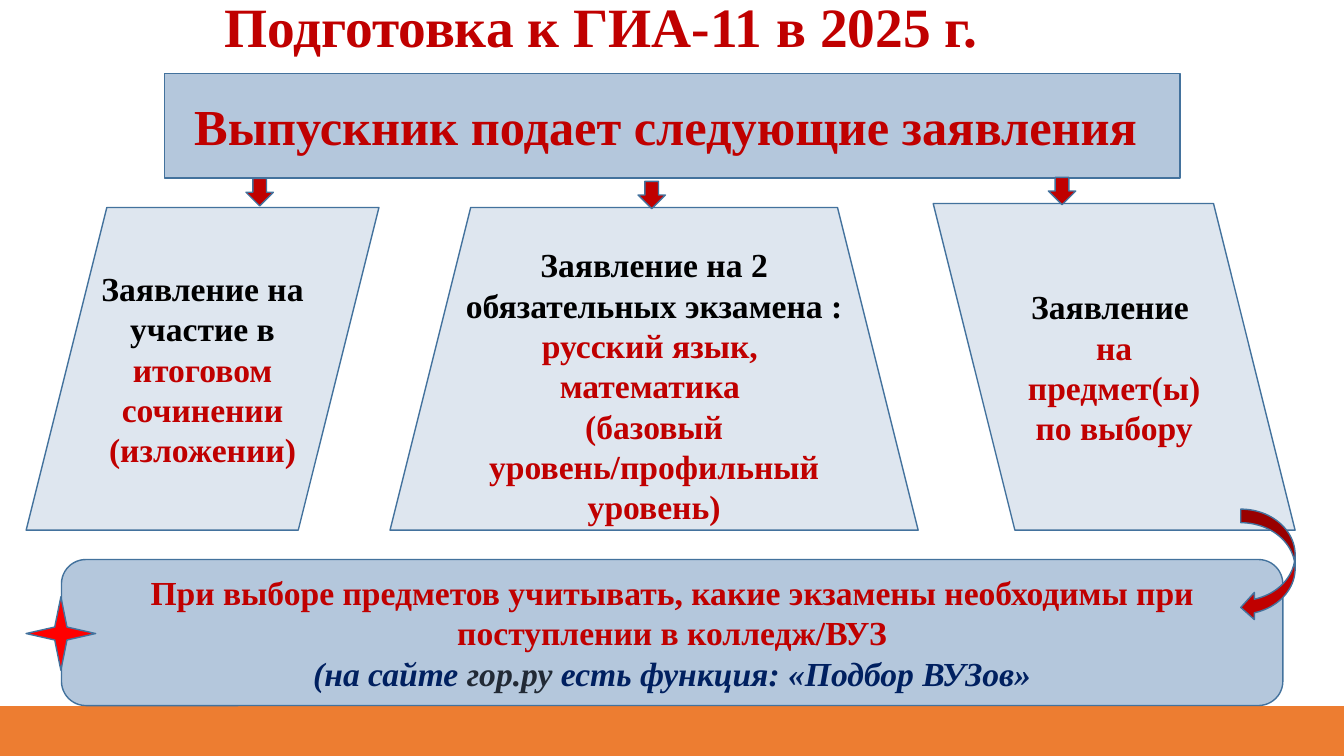
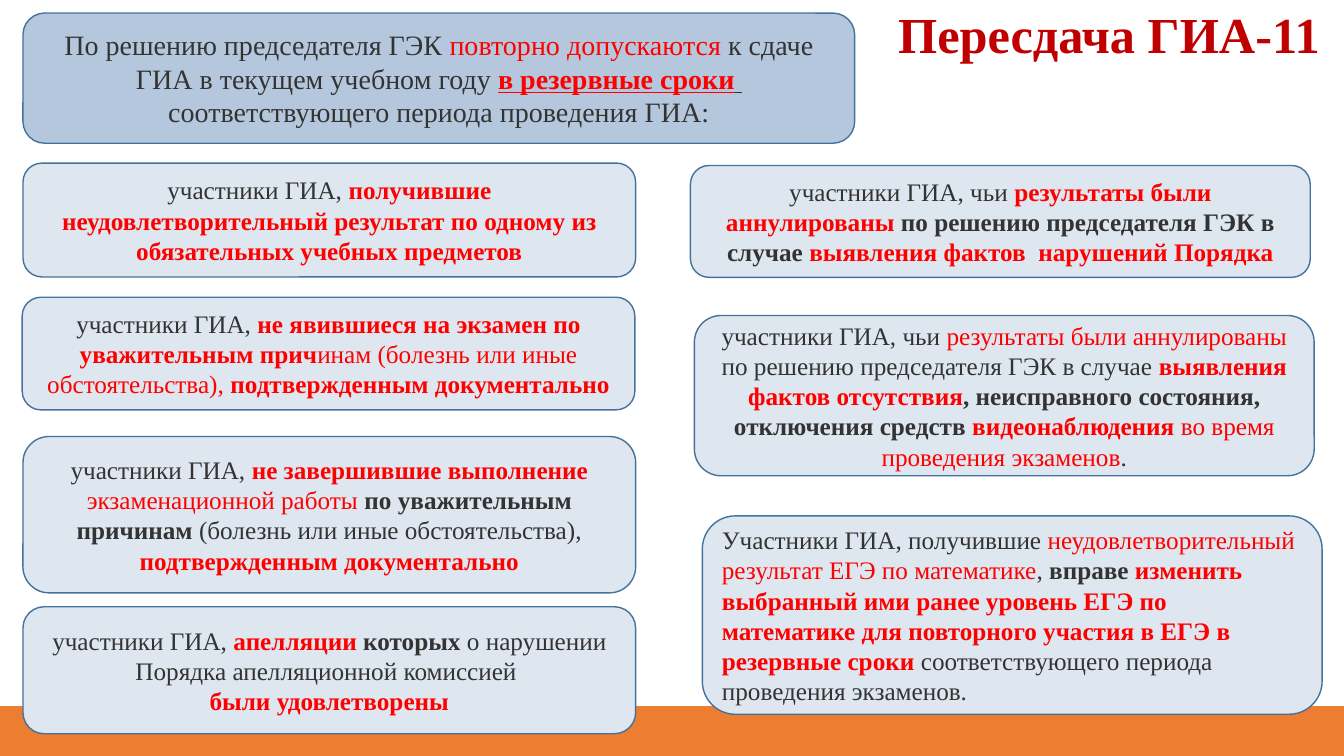
from pptx import Presentation
from pptx.dml.color import RGBColor
from pptx.enum import shapes, text
from pptx.util import Cm, Pt

FONT = "Times New Roman"
DEEP_RED, RED, BLACK, GREY = "C00000", "FF0000", "000000", "333333"
NAVY, SLATE = "002060", "222A35"
BLUE, PALE, OUTLINE, ORANGE = "B4C7DC", "DEE6EF", "43729D", "ED7D31"
WIDTH, HEIGHT, BAND_TOP = 33.87, 19.05, 17.81
KIND = shapes.MSO_SHAPE
CENTER, LEFT = text.PP_ALIGN.CENTER, text.PP_ALIGN.LEFT

# Run styles: colour, then the font switches that are on
STYLES = {
    "black": (BLACK, "bold"),
    "deep": (DEEP_RED, "bold"),
    "navy": (NAVY, "bold", "italic"),
    "slate": (SLATE, "bold", "italic"),
    "grey": (GREY,),
    "grey bold": (GREY, "bold"),
    "grey line": (GREY, "bold", "underline"),
    "red": (RED,),
    "red bold": (RED, "bold"),
    "red line": (RED, "bold", "underline"),
}

# Texts are lists of paragraphs, paragraphs are lists of (text, style)
HEADING = [[("Выпускник подает следующие заявления ", "deep")]]
APPLICATIONS = [  # shape, box, mirrored, text
    (KIND.PARALLELOGRAM, (0.66, 5.23, 8.89, 8.13), False, [
        [("Заявление на участие в ", "black"), ("итоговом сочинении", "deep")],
        [("(изложении)", "deep")]]),
    (KIND.PARALLELOGRAM, (23.52, 5.13, 9.12, 8.23), True, [
        [("Заявление ", "black")],
        [("на предмет(ы) по выбору", "deep")]]),
    (KIND.TRAPEZOID, (9.83, 5.23, 13.31, 8.13), False, [
        [("Заявление на 2 обязательных экзамена : ", "black"), ("русский язык, ", "deep")],
        [("математика ", "deep")],
        [("(базовый уровень/профильный уровень)", "deep")]]),
]
ADVICE = [
    [("При выборе предметов учитывать, какие экзамены необходимы при "
      "поступлении в колледж/ВУЗ", "deep")],
    [("(на сайте ", "navy"), ("гор.ру", "slate"),
     (" есть функция: «Подбор ВУЗов»", "navy")],
]
MARKS = [  # shape, box, fill
    (KIND.STAR_4_POINT, (0.66, 15.04, 1.75, 1.85), RED),
    (KIND.DOWN_ARROW, (6.2, 4.5, 0.69, 0.69), DEEP_RED),
    (KIND.DOWN_ARROW, (16.08, 4.57, 0.69, 0.69), DEEP_RED),
    (KIND.DOWN_ARROW, (26.42, 4.47, 0.69, 0.69), DEEP_RED),
    (KIND.CURVED_LEFT_ARROW, (31.27, 12.83, 1.37, 2.82), DEEP_RED),
]

DECISION = [
    [("По решению председателя ГЭК ", "grey"), ("повторно допускаются ", "red"),
     ("к сдаче ГИА в текущем учебном году ", "grey"),
     ("в резервные сроки", "red line"), (" ", "grey line")],
    [("соответствующего периода проведения ГИА:", "grey")],
]
MEMBERS = ("участники ГИА, ", "grey")
WHOSE = ("участники ГИА, чьи ", "grey")
LEFT_CASES = [  # left, top, height, alignment, text
    (0.58, 4.11, 2.87, CENTER, [
        [MEMBERS, ("получившие неудовлетворительный результат по одному из "
                   "обязательных учебных предметов", "red bold")]]),
    (0.56, 7.49, 2.84, CENTER, [
        [MEMBERS, ("не явившиеся на экзамен по уважительным прич", "red bold"),
         ("инам (болезнь или иные обстоятельства), ", "red"),
         ("подтвержденным документально", "red bold")]]),
    (0.58, 11, 3.94, CENTER, [
        [MEMBERS, ("не завершившие выполнение ", "red bold"),
         ("экзаменационной работы ", "red"),
         ("по уважительным причинам ", "grey bold"),
         ("(болезнь или иные обстоятельства), ", "grey"),
         ("подтвержденным документально", "red bold")]]),
    (0.58, 15.29, 3.2, CENTER, [
        [MEMBERS, ("апелляции", "red bold"), (" которых ", "grey bold"),
         ("о нарушении Порядка апелляционной комиссией ", "grey")],
        [("были удовлетворены", "red bold")]]),
]
RIGHT_CASES = [
    (17.4, 4.17, 2.82, CENTER, [
        [WHOSE, ("результаты были аннулированы ", "red bold"),
         ("по решению председателя ГЭК в случае ", "grey bold"),
         ("выявления фактов  нарушений Порядка", "red bold")]]),
    (17.5, 7.95, 4.04, CENTER, [
        [WHOSE, ("результаты были аннулированы ", "red"),
         ("по решению председателя ГЭК в случае ", "grey"),
         ("выявления фактов отсутствия", "red bold"),
         (", неисправного состояния, отключения средств ", "grey bold"),
         ("видеонаблюдения ", "red bold"),
         ("во время проведения экзаменов", "red"), (".", "grey")]]),
    (17.7, 13, 5, LEFT, [
        [("Участники ГИА, получившие ", "grey"),
         ("неудовлетворительный результат ЕГЭ по математике", "red"),
         (", ", "grey"), ("вправе ", "grey bold"),
         ("изменить выбранный ими ранее уровень ЕГЭ по математике для "
          "повторного участия в ЕГЭ в резервные сроки ", "red bold"),
         ("соответствующего периода проведения экзаменов.", "grey")]]),
]
CASE_COLUMNS = [(15.44, LEFT_CASES), (15.62, RIGHT_CASES)]  # width, cases


def rgb(colour):
    return RGBColor.from_string(colour)


def apply_style(font, style):
    colour, *switches = STYLES[style]
    font.color.rgb = rgb(colour)
    for name in ("bold", "italic", "underline"):
        setattr(font, name, name in switches)


def write(tf, paragraphs, size, align):
    tf.word_wrap = True
    tf.auto_size = text.MSO_AUTO_SIZE.NONE
    tf.vertical_anchor = text.MSO_ANCHOR.MIDDLE
    for i, runs in enumerate(paragraphs):
        p = tf.add_paragraph() if i else tf.paragraphs[0]
        p.alignment = align
        p.font.name, p.font.size = FONT, Pt(size)
        styles = {style for _, style in runs}
        if len(styles) == 1:
            apply_style(p.font, runs[0][1])
        for content, style in runs:
            r = p.add_run()
            r.text = content
            if len(styles) > 1:
                apply_style(r.font, style)


def add_shape(slide, kind, box, fill, line=OUTLINE):
    sp = slide.shapes.add_shape(kind, *map(Cm, box))
    sp.shadow.inherit = False
    sp.fill.solid()
    sp.fill.fore_color.rgb = rgb(fill)
    sp.line.color.rgb = rgb(line)
    sp.line.width = Pt(1)
    return sp


def add_card(slide, kind, box, fill, paragraphs, size, align=CENTER):
    sp = add_shape(slide, kind, box, fill)
    write(sp.text_frame, paragraphs, size, align)
    return sp


def add_slide(prs, title, box, size, align):
    """Add a slide with its title and the orange bottom band."""
    slide = prs.slides.add_slide(prs.slide_layouts[5])
    sp = slide.shapes.title
    sp.left, sp.top, sp.width, sp.height = map(Cm, box)
    write(sp.text_frame, [[(title, "deep")]], size, align)
    sp.text_frame.paragraphs[0].line_spacing = 0.9
    band = (0, BAND_TOP, WIDTH, HEIGHT - BAND_TOP)
    add_shape(slide, KIND.RECTANGLE, band, ORANGE, ORANGE)
    return slide


def build_applications(prs):
    slide = add_slide(prs, "Подготовка к ГИА-11 в 2025 г.",
                      (0.33, 0.05, 29.64, 1.4), 39.6, CENTER)
    add_card(slide, KIND.RECTANGLE, (4.14, 1.85, 25.6, 2.64), BLUE, HEADING, 36)
    for kind, box, mirrored, paragraphs in APPLICATIONS:
        sp = add_card(slide, kind, box, PALE, paragraphs, 24)
        if mirrored:
            sp._element.spPr.xfrm.set("flipH", "1")
    add_card(slide, KIND.ROUNDED_RECTANGLE, (1.55, 14.1, 30.78, 3.68), BLUE, ADVICE, 24)
    for kind, box, fill in MARKS:
        add_shape(slide, kind, box, fill)


def build_retakes(prs):
    slide = add_slide(prs, "Пересдача ГИА-11", (22.38, 0, 11.48, 1.88), 36, LEFT)
    add_card(slide, KIND.ROUNDED_RECTANGLE, (0.58, 0.33, 20.96, 3.28), BLUE, DECISION, 20)
    for width, cases in CASE_COLUMNS:
        for left, top, height, align, paragraphs in cases:
            add_card(slide, KIND.FLOWCHART_ALTERNATE_PROCESS,
                     (left, top, width, height), PALE, paragraphs, 18, align)


def main():
    prs = Presentation()
    prs.slide_width, prs.slide_height = Cm(WIDTH), Cm(HEIGHT)
    build_applications(prs)
    build_retakes(prs)
    prs.save("out.pptx")


if __name__ == "__main__":
    main()
